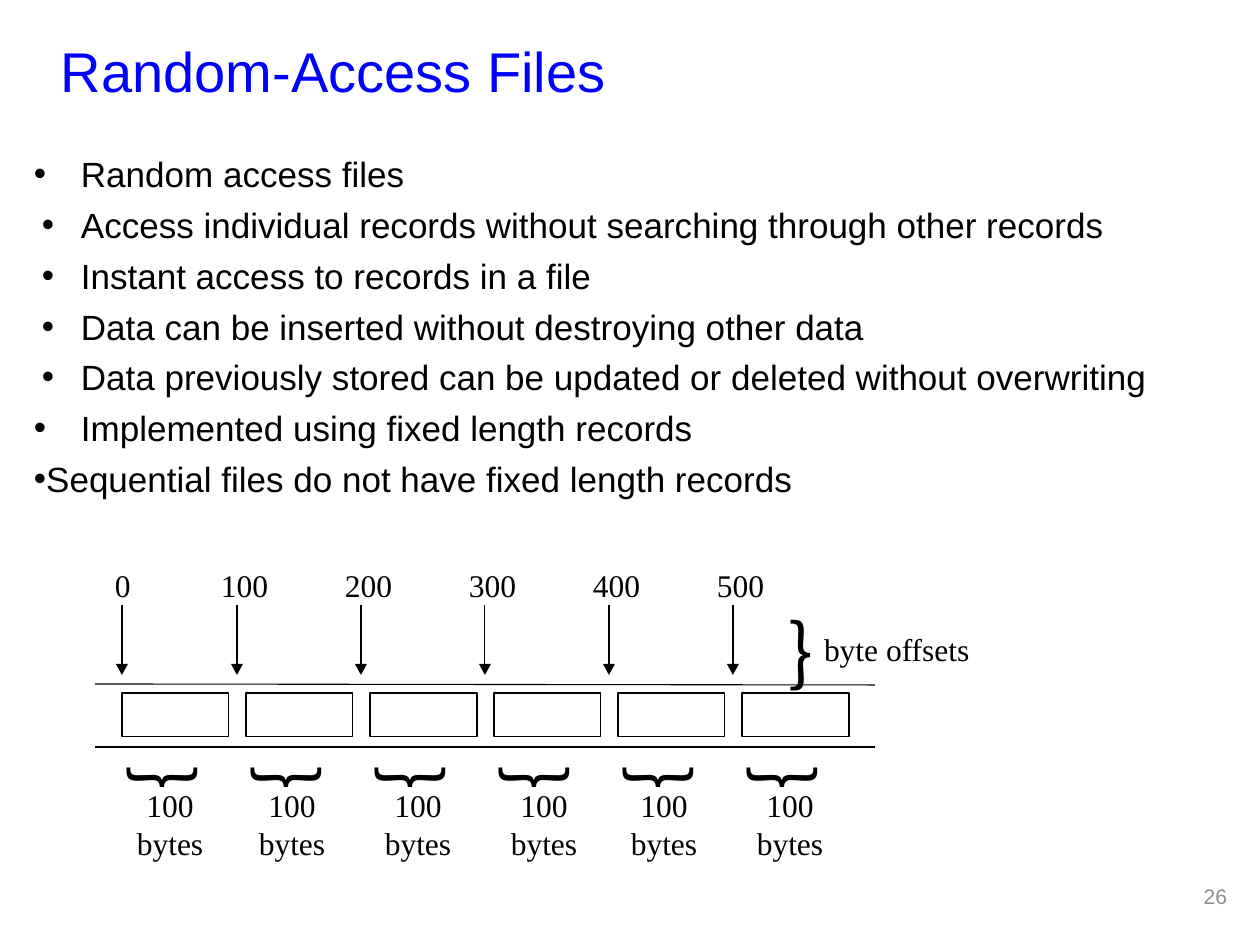
from lxml import etree
from pptx import Presentation
from pptx.dml.color import RGBColor
from pptx.enum.shapes import MSO_CONNECTOR, MSO_SHAPE
from pptx.enum.text import MSO_ANCHOR, PP_ALIGN
from pptx.oxml.ns import qn
from pptx.util import Emu, Pt

STRAIGHT, RECT = MSO_CONNECTOR.STRAIGHT, MSO_SHAPE.RECTANGLE
TOP, MIDDLE = MSO_ANCHOR.TOP, MSO_ANCHOR.MIDDLE
LEFT, CENTER, RIGHT = PP_ALIGN.LEFT, PP_ALIGN.CENTER, PP_ALIGN.RIGHT

BLACK = RGBColor(0x00, 0x00, 0x00)
BLUE = RGBColor(0x00, 0x00, 0xFF)
GRAY = RGBColor(0x8C, 0x8C, 0x8C)
SANS, SERIF, BRACE = "Arial", "Times New Roman", "Noto Sans CJK JP"

TITLE = "Random-Access Files"
MAIN, SUB, TIGHT = (47, -47), (47, -39), (8, -8)
BULLETS = [
    ("Random access files", MAIN),
    ("Access individual records without searching through other records", SUB),
    ("Instant access to records in a file", SUB),
    ("Data can be inserted without destroying other data", SUB),
    ("Data previously stored can be updated or deleted without overwriting", SUB),
    ("Implemented using fixed length records", MAIN),
    ("Sequential files do not have fixed length records", TIGHT),
]
OFFSETS = ["0", "100", "200", "300", "400", "500"]
RECORD_SIZE = "100\nbytes"
SIZE_LEFTS = [136, 258, 384, 510, 630, 756]
RAILS = [(684, 685), (747, 747)]
PITCH = 124
INSET = 13


def px(n):
    return Emu(round(n * 914400 / 126))


def add_text(s, paragraphs, x, y, w, h, size=18, font=SERIF, color=BLACK, align=LEFT,
             anchor=TOP, inset=0, rotation=0, before=0, indents=()):
    sp = s.shapes.add_textbox(px(x), px(y), px(w), px(h))
    sp.rotation = rotation
    tf = sp.text_frame
    tf.word_wrap = True
    tf.vertical_anchor = anchor
    tf.margin_left = tf.margin_right = px(inset)
    tf.margin_top = tf.margin_bottom = px(inset // 2)
    for i, text in enumerate(paragraphs):
        p = tf.add_paragraph() if i else tf.paragraphs[0]
        p.text = text
        p.alignment = align
        p.space_before = Pt(before)
        for r in p.runs:
            r.font.size, r.font.name = Pt(size), font
            r.font.color.rgb = color
        if indents:
            margin, indent = indents[i]
            ppr = p._p.get_or_add_pPr()
            ppr.set("marL", str(px(margin)))
            ppr.set("indent", str(px(indent)))
            etree.SubElement(ppr, qn("a:buFont")).set("typeface", SANS)
            etree.SubElement(ppr, qn("a:buChar")).set("char", "•")


def add_line(s, x1, y1, x2, y2):
    line = s.shapes.add_connector(STRAIGHT, px(x1), px(y1), px(x2), px(y2))
    line.line.color.rgb = BLACK
    line.line.width = Pt(0.63)
    etree.SubElement(line._element.spPr, qn("a:effectLst"))


def add_arrow(s, x):
    add_line(s, x, 605, x, 665)
    builder = s.shapes.build_freeform(px(x - 6), px(664))
    builder.add_line_segments([(px(x), px(675)), (px(x + 6), px(664))], close=True)
    head = builder.convert_to_shape()
    head.shadow.inherit = False
    head.fill.solid()
    head.fill.fore_color.rgb = BLACK
    head.line.fill.background()


def add_record(s, x):
    sp = s.shapes.add_shape(RECT, px(x), px(693), px(107), px(44))
    sp.shadow.inherit = False
    sp.fill.background()
    sp.line.color.rgb = BLACK
    sp.line.width = Pt(0.63)


def main():
    """Build the random-access files slide."""
    prs = Presentation()
    prs.slide_width, prs.slide_height = px(1260), px(945)
    s = prs.slides.add_slide(prs.slide_layouts[6])

    add_text(s, [TITLE], 48, 21, 1134, 98, size=32, font=SANS, color=BLUE,
             anchor=MIDDLE, inset=INSET)
    add_text(s, [text for text, _ in BULLETS], 21, 147, 1207, 378, size=20, font=SANS,
             inset=INSET, before=5, indents=[indent for _, indent in BULLETS])

    for y1, y2 in RAILS:
        add_line(s, 95, y1, 875, y2)
    for i, (offset, size_left) in enumerate(zip(OFFSETS, SIZE_LEFTS)):
        left = 122 + i * PITCH
        arrow_x = left - 9 if i else left
        add_record(s, left)
        add_arrow(s, arrow_x)
        add_text(s, [offset], arrow_x - (16 if i else 7), 566, 48, 38)
        add_text(s, ["}"], left + 10, 761, 76, 86, size=42, font=BRACE, rotation=90)
        add_text(s, [RECORD_SIZE], size_left, 786, 68, 76, align=CENTER)

    add_text(s, ["}"], 789, 605, 76, 86, size=42, font=BRACE)
    add_text(s, ["byte offsets"], 824, 630, 148, 38)
    add_text(s, ["26"], 946, 871, 294, 50, size=12, font=SANS, color=GRAY,
             align=RIGHT, anchor=MIDDLE, inset=INSET)
    prs.save("out.pptx")


if __name__ == "__main__":
    main()
